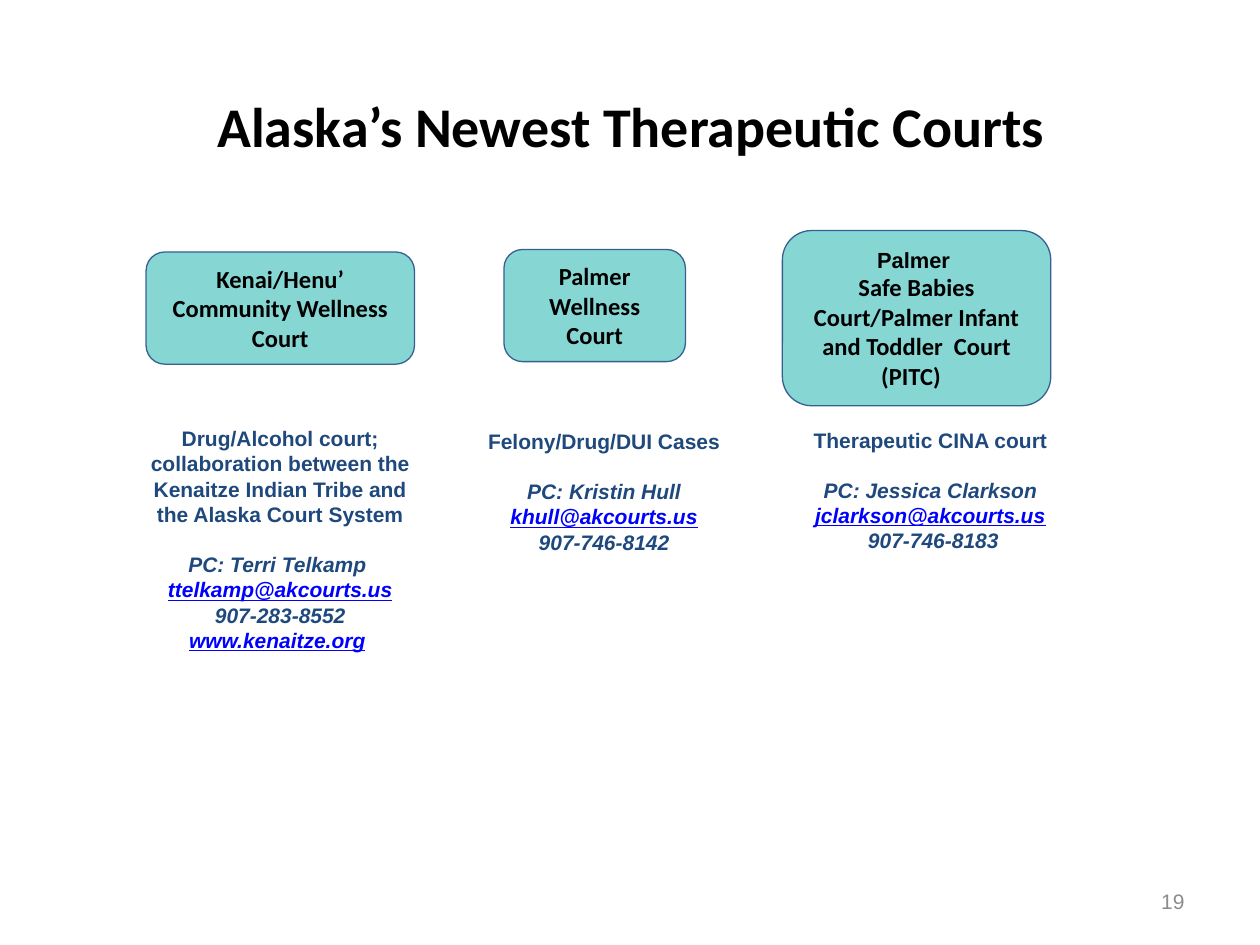
"""Build the slide on Alaska's newest therapeutic courts."""
from pptx import Presentation
from pptx.dml.color import RGBColor
from pptx.enum.shapes import MSO_SHAPE
from pptx.enum.text import MSO_ANCHOR, MSO_AUTO_SIZE, PP_ALIGN
from pptx.util import Inches, Pt

ROUNDED = MSO_SHAPE.ROUNDED_RECTANGLE
TOP, MIDDLE = MSO_ANCHOR.TOP, MSO_ANCHOR.MIDDLE
CENTER, RIGHT = PP_ALIGN.CENTER, PP_ALIGN.RIGHT
NO_FIT = MSO_AUTO_SIZE.NONE
TITLE_ONLY = 5

deck = Presentation()
deck.slide_width, deck.slide_height = Inches(10), Inches(7.5)
COLUMN, ROW = deck.slide_width // 100, deck.slide_height // 75


def color(value):
    """Turn a hex string into a colour."""
    return RGBColor.from_string(value)


def write(holder, lines, anchor=TOP, align=CENTER):
    """Fill a shape with paragraphs, each a list of (text, font values) runs."""
    frame = holder.text_frame
    for name, value in dict(word_wrap=True, auto_size=NO_FIT, vertical_anchor=anchor).items():
        setattr(frame, name, value)
    for index, runs in enumerate(lines):
        paragraph = frame.add_paragraph() if index else frame.paragraphs[0]
        paragraph.alignment = align
        for text, values in runs:
            run = paragraph.add_run()
            run.text = text
            run.font.color.rgb = color(values["color"])
            for name in values.keys() - {"color"}:
                setattr(run.font, name, values[name])
    return frame


heading = dict(name="Calibri", size=Pt(32), bold=True, color="000000")
court_name = {**heading, "size": Pt(14)}
place = {**heading, "name": "Arial", "size": Pt(12.5)}
purpose = dict(name="Arial", size=Pt(12), bold=True, color="1F497D")
contact = {**purpose, "italic": True}
address = {**contact, "underline": True, "color": "0000FF"}
page = dict(name="Arial", size=Pt(12), color="8C8C8C")

slide = deck.slides.add_slide(deck.slide_layouts[TITLE_ONLY])
title = slide.shapes.title
title_place = dict(left=10.1 * COLUMN, top=6.6 * ROW, width=80 * COLUMN, height=6.6 * ROW)
for side, length in title_place.items():
    setattr(title, side, int(length))
write(title, [[("Alaska’s Newest Therapeutic Courts", heading)]], MIDDLE)

courts = [
    ((11.6, 20, 21.3, 8.9), [[("Kenai/Henu’ Community Wellness Court", court_name)]],
     (10.1, 33.3, 24.3, 19.2),
     [[("Drug/Alcohol court; collaboration between the Kenaitze Indian Tribe "
        "and the Alaska Court System", purpose)],
      [("PC: Terri Telkamp ", contact)],
      [("ttelkamp@akcourts.us", address)],
      [("907-283-8552", contact)],
      [("www.kenaitze.org", address), (" ", contact)]]),
    ((40, 19.8, 14.4, 8.9), [[("Palmer Wellness Court", court_name)]],
     (35.8, 33.5, 24.3, 11.1),
     [[("Felony/Drug/DUI Cases", purpose)],
      [("PC: Kristin Hull", contact)],
      [("khull@akcourts.us", address)],
      [("907-746-8142", contact)]]),
    ((62.1, 18.3, 21.3, 13.9),
     [[("Palmer ", place)],
      [("Safe Babies Court/Palmer Infant and Toddler  Court (PITC)  ", court_name)]],
     (61.7, 33.4, 24.3, 11.1),
     [[("Therapeutic CINA court", purpose)],
      [("PC: Jessica Clarkson", contact)],
      [("jclarkson@akcourts.us", address)],
      [(" 907-746-8183", contact)]]),
]

for (left, top, width, height), name_lines, details_place, detail_lines in courts:
    court = slide.shapes.add_shape(
        ROUNDED, int(left * COLUMN), int(top * ROW), int(width * COLUMN), int(height * ROW))
    court.shadow.inherit = False
    court.fill.solid()
    court.fill.fore_color.rgb = color("86D6D4")
    court.line.color.rgb = color("376092")
    court.line.width = Pt(0.75)
    write(court, name_lines, MIDDLE)

    left, top, width, height = details_place
    details = slide.shapes.add_textbox(
        int(left * COLUMN), int(top * ROW), int(width * COLUMN), int(height * ROW))
    write(details, detail_lines).paragraphs[1].space_before = Pt(14.4)

page_number = slide.shapes.add_textbox(
    int(71.7 * COLUMN), int(69.5 * ROW), int(23.3 * COLUMN), 4 * ROW)
write(page_number, [[("19", page)]], MIDDLE, RIGHT)

deck.save("out.pptx")
